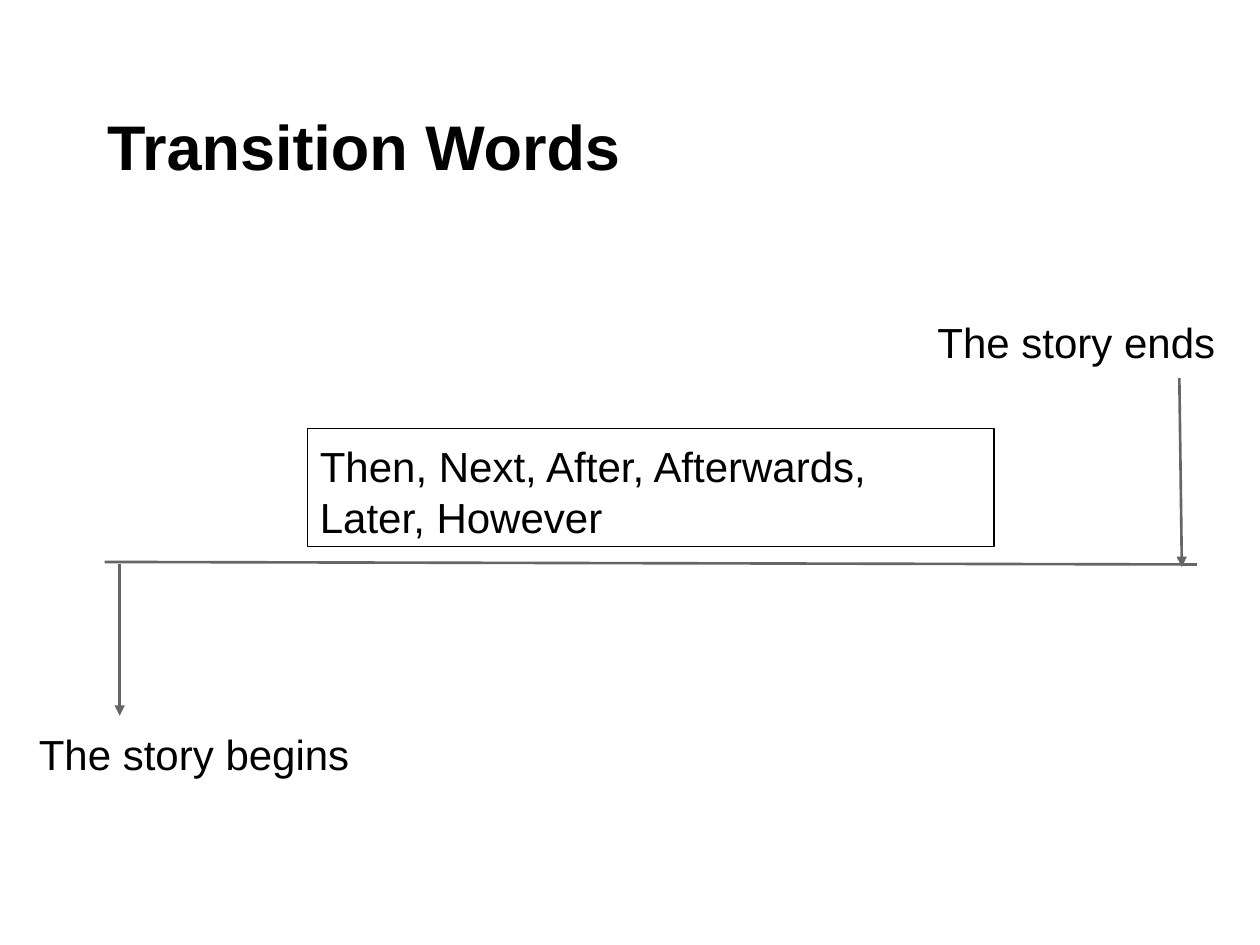
"""Build the transition words story line slide."""
from dataclasses import dataclass

from pptx import Presentation
from pptx import util as u
from pptx.dml.color import RGBColor
from pptx.enum import shapes, text
from pptx.oxml.ns import qn
from lxml import etree

BLACK = RGBColor(0x00, 0x00, 0x00)
WHITE = RGBColor(0xFF, 0xFF, 0xFF)
GRAY = RGBColor(0x66, 0x66, 0x66)
COLS, ROWS = 100, 75
WIDE, HIGH = u.Inches(10), u.Inches(7.5)


@dataclass
class Label:
    words: str
    left: float
    top: float
    wide: float
    high: float
    inset: float = 1
    framed: bool = False


@dataclass
class Stroke:
    left: float
    top: float
    right: float
    base: float
    arrow: bool = True


LABELS = [
    Label("The story begins", 2.1, 56.8, 29.2, 8.2),
    Label("The story ends", 71.2, 24.1, 28.6, 5.7, inset=3.2),
    Label("Then, Next, After, Afterwards, Later, However",
          24.4, 34, 54.5, 9.4, framed=True),
]
STROKES = [
    Stroke(8.3, 44.6, 95, 44.8, arrow=False),
    Stroke(9.5, 44.8, 9.5, 56.8),
    Stroke(93.6, 30, 93.8, 45),
]


def col(n: float) -> int:
    """Return the length of n grid columns."""
    return round(WIDE * n / COLS)


def row(n: float) -> int:
    """Return the length of n grid rows."""
    return round(HIGH * n / ROWS)


def write(shape, words: str, size: int, inset: float, bold: bool = False,
          anchor=text.MSO_ANCHOR.TOP) -> None:
    """Fill a shape with one left-aligned paragraph."""
    frame = shape.text_frame
    frame.text = words
    frame.word_wrap = True
    frame.auto_size = text.MSO_AUTO_SIZE.NONE
    frame.vertical_anchor = anchor
    frame.margin_left = col(inset)
    frame.margin_right = col(1)
    frame.margin_top = frame.margin_bottom = row(1)
    para = frame.paragraphs[0]
    para.alignment = text.PP_ALIGN.LEFT
    font = para.font
    font.name, font.size, font.bold = "Arial", u.Pt(size), bold
    font.color.rgb = BLACK


def add_label(slide, label: Label) -> None:
    """Draw a label, with a thin frame if it asks for one."""
    area = col(label.left), row(label.top), col(label.wide), row(label.high)
    if label.framed:
        box = slide.shapes.add_shape(shapes.MSO_SHAPE.RECTANGLE, *area)
        box.shadow.inherit = False
        box.fill.background()
        box.line.color.rgb = BLACK
        box.line.width = u.Pt(0.75)
    else:
        box = slide.shapes.add_textbox(*area)
    write(box, label.words, 24, label.inset)


def add_stroke(slide, stroke: Stroke) -> None:
    """Draw a straight line, with an arrowhead at its end if asked."""
    line = slide.shapes.add_connector(
        shapes.MSO_CONNECTOR.STRAIGHT, col(stroke.left), row(stroke.top),
        col(stroke.right), row(stroke.base))
    line.line.color.rgb = GRAY
    line.line.width = u.Pt(1.5)
    if stroke.arrow:
        etree.SubElement(line.line._get_or_add_ln(), qn("a:tailEnd"),
                         type="triangle")
    etree.SubElement(line._element.spPr, qn("a:effectLst"))


def main() -> None:
    """Build and save the slide."""
    deck = Presentation()
    deck.slide_width, deck.slide_height = WIDE, HIGH
    slide = deck.slides.add_slide(deck.slide_layouts[5])
    slide.background.fill.solid()
    slide.background.fill.fore_color.rgb = WHITE
    title = slide.shapes.title
    title.left, title.top = col(5), row(3)
    title.width, title.height = col(90), row(12.5)
    write(title, "Transition Words", 36, 3.5, True, text.MSO_ANCHOR.BOTTOM)
    for stroke in STROKES:
        add_stroke(slide, stroke)
    for label in LABELS:
        add_label(slide, label)
    deck.save("out.pptx")


if __name__ == "__main__":
    main()
